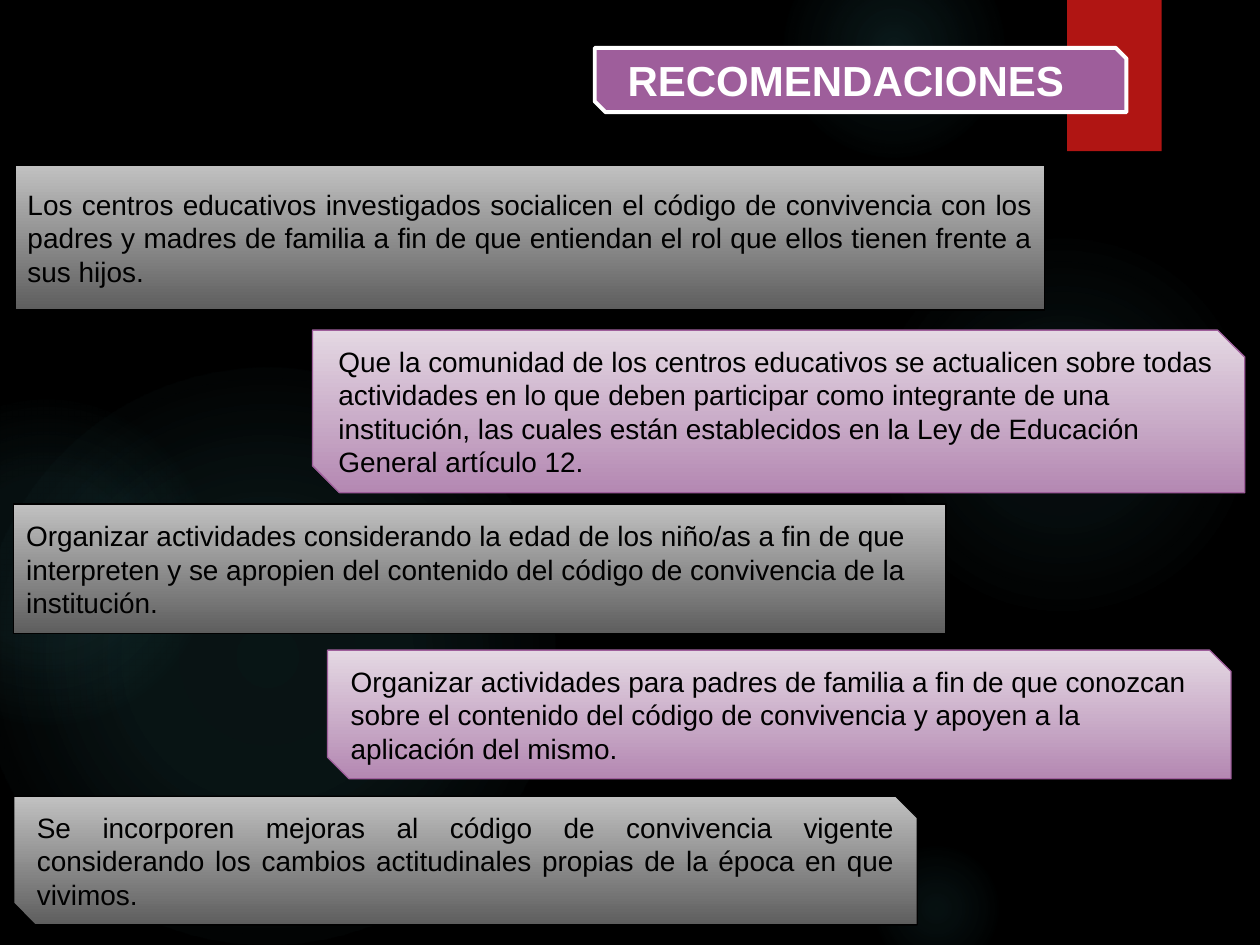
from lxml.etree import fromstring
from pptx import Presentation
from pptx.dml.color import RGBColor
from pptx.enum.shapes import MSO_SHAPE
from pptx.enum.text import MSO_ANCHOR, PP_ALIGN
from pptx.oxml.ns import nsdecls, qn
from pptx.util import Inches, Pt

COLUMNS, ROWS = 100, 75  # grid over the slide
RECT, SNIPPED = MSO_SHAPE.RECTANGLE, MSO_SHAPE.SNIP_2_DIAG_RECTANGLE
LEFT, JUSTIFIED = PP_ALIGN.LEFT, PP_ALIGN.JUSTIFY
GRAY = ("C1C1C1", "5E5E5E", "000000")  # top, bottom, outline
LILAC = ("E4D8E3", "B488B2", "9E5E9B")


def color(hex_text):
    return RGBColor.from_string(hex_text)


def write(shape, text, size=16, ink="000000", bold=False, align=LEFT, indent=0):
    frame = shape.text_frame
    frame.word_wrap = True
    frame.vertical_anchor = MSO_ANCHOR.MIDDLE
    paragraph = frame.paragraphs[0]
    paragraph.alignment = align
    if indent:
        paragraph._p.get_or_add_pPr().set("marL", str(Inches(indent)))
    run = paragraph.add_run()
    run.text = text
    run.font.name, run.font.size, run.font.bold = "Arial", Pt(size), bold
    run.font.color.rgb = color(ink)


class Board:
    def __init__(self, deck, background="000000", glow_tint="50B9C1"):
        self.slide = deck.slides.add_slide(deck.slide_layouts[6])
        self.column = deck.slide_width / COLUMNS
        self.row = deck.slide_height / ROWS
        self.glow_tint = glow_tint
        self.slide.background.fill.solid()
        self.slide.background.fill.fore_color.rgb = color(background)

    def shape(self, kind, left, top, width, height, outline=None, weight=0.75):
        box = self.slide.shapes.add_shape(
            kind, round(left * self.column), round(top * self.row),
            round(width * self.column), round(height * self.row))
        box.shadow.inherit = False
        if outline:
            box.line.color.rgb = color(outline)
            box.line.width = Pt(weight)
        else:
            box.line.fill.background()
        return box

    def solid(self, kind, *place, fill, **border):
        box = self.shape(kind, *place, **border)
        box.fill.solid()
        box.fill.fore_color.rgb = color(fill)
        return box

    def glow(self, left, top, size, *stops):
        """Soft disc; stops are (position, opacity) in percent."""
        disc = self.shape(MSO_SHAPE.OVAL, left, top, size, size)
        disc.fill.gradient()
        stop_xml = "".join(
            f'<a:gs pos="{position * 1000}"><a:srgbClr val="{self.glow_tint}">'
            f'<a:alpha val="{opacity * 1000}"/></a:srgbClr></a:gs>'
            for position, opacity in stops)
        radial = fromstring(
            f'<a:gradFill {nsdecls("a")} rotWithShape="1"><a:gsLst>{stop_xml}</a:gsLst>'
            '<a:path path="circle"><a:fillToRect l="50000" t="50000" r="50000" b="50000"/>'
            '</a:path></a:gradFill>')
        properties = disc._element.spPr
        properties.replace(properties.find(qn("a:gradFill")), radial)

    def panel(self, kind, place, tones, text, align):
        top_tone, bottom_tone, outline = tones
        box = self.shape(kind, *place, outline=outline)
        box.fill.gradient()
        box.fill.gradient_angle = 270
        for stop, position, tone in zip(box.fill.gradient_stops, (0, 1), (top_tone, bottom_tone)):
            stop.position = position
            stop.color.rgb = color(tone)
        write(box, text, align=align)


# left, top, diameter, then centre / middle / edge opacity and edge position
GLOWS = [
    (68.9, 18.3, 30.8, 7, 6, 69),
    (62.2, -5, 17.5, 14, 7, 73),
    (68.9, 66.7, 10.8, 9, 5, 66),
    (-1.7, 29.2, 45.8, 11, 10, 75),
    (-9.2, 31.7, 25.8, 8, 8, 72),
]

RECOMMENDATIONS = [
    (RECT, (1.2, 13.1, 81.7, 11.5), GRAY,
     "Los centros educativos investigados socialicen el código de convivencia con los "
     "padres y madres de familia a fin de que entiendan el rol que ellos tienen frente a "
     "sus hijos.", JUSTIFIED),
    (SNIPPED, (24.8, 26.2, 74, 12.9), LILAC,
     "Que la comunidad de los centros educativos se actualicen sobre todas actividades en "
     "lo que deben participar como integrante de una institución, las cuales están "
     "establecidos en la Ley de Educación General artículo 12.", LEFT),
    (RECT, (1.1, 40, 74, 10.3), GRAY,
     "Organizar actividades considerando la edad de los niño/as a fin de que interpreten y "
     "se apropien del contenido del código de convivencia de la institución.", LEFT),
    (SNIPPED, (26, 51.6, 71.7, 10.2), LILAC,
     "Organizar actividades para padres de familia a fin de que conozcan sobre el contenido "
     "del código de convivencia y apoyen a la aplicación del mismo.", LEFT),
    (SNIPPED, (1.1, 63.2, 71.7, 10.2), GRAY,
     "Se incorporen mejoras al código de convivencia vigente considerando los cambios "
     "actitudinales propias de la época en que vivimos.", JUSTIFIED),
]


def main():
    deck = Presentation()
    deck.slide_width, deck.slide_height = Inches(10), Inches(7.5)
    board = Board(deck)

    # Background glows and red bookmark
    for left, top, size, centre, middle, edge in GLOWS:
        board.glow(left, top, size, (0, centre), (36, middle), (edge, 0))
    board.solid(RECT, 84.7, 0, 7.5, 12, fill="B01513")

    # Recommendations
    for recommendation in RECOMMENDATIONS:
        board.panel(*recommendation)

    # Heading
    heading = board.solid(SNIPPED, 47.2, 3.8, 42.2, 5.1,
                          fill="9E5E9B", outline="FFFFFF", weight=2.25)
    write(heading, "RECOMENDACIONES", size=24, ink="FFFFFF", bold=True,
          align=JUSTIFIED, indent=0.12)

    deck.save("out.pptx")


if __name__ == "__main__":
    main()
